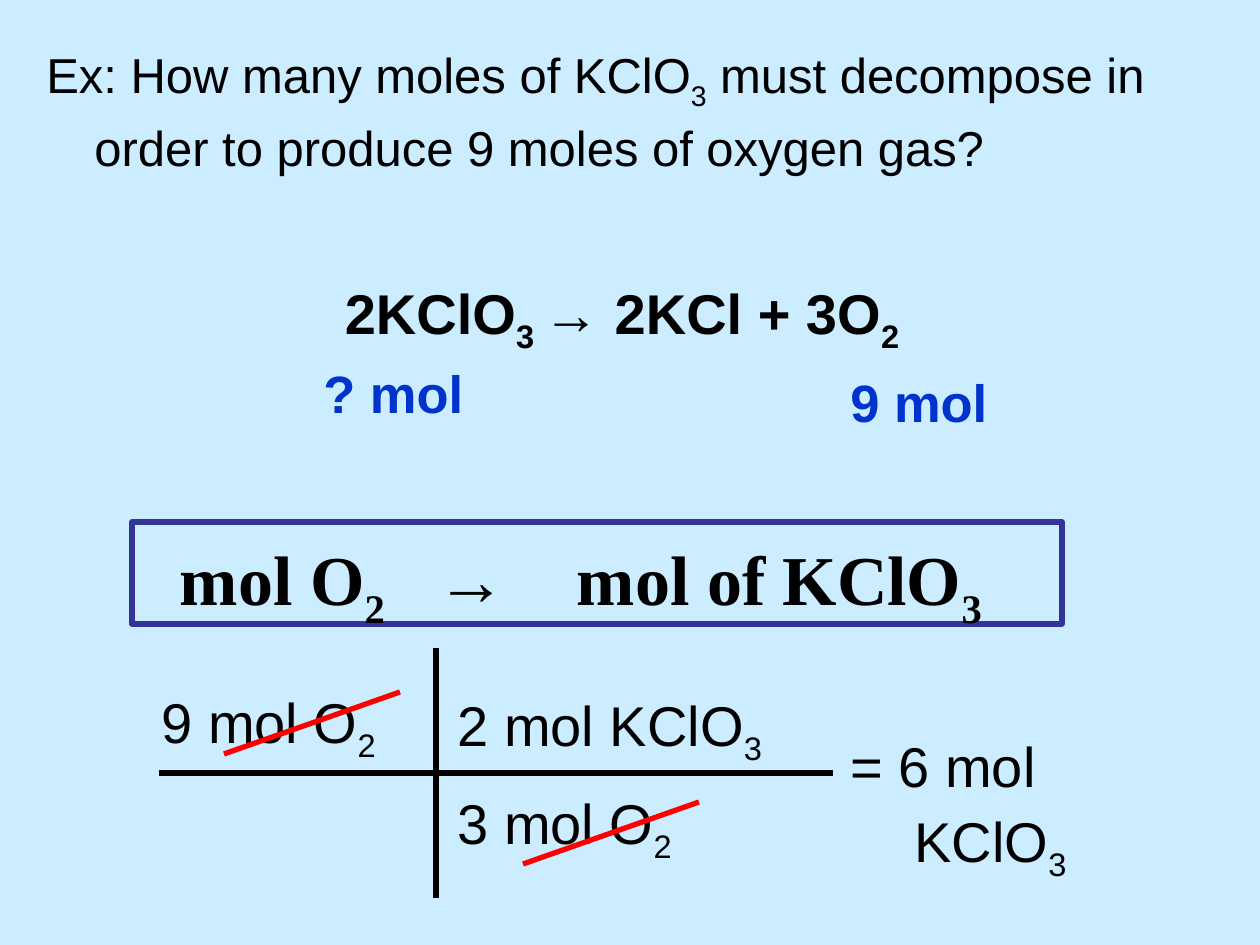
import pptx
import pptx.dml.color
import pptx.enum.shapes
import pptx.enum.text
import pptx.util
from lxml import etree
from pptx.oxml.ns import qn

EMU_PER_PX = 914400 / 126
HANG = 48
BLACK, BLUE, RED = "000000", "0033CC", "FF0000"


def px(length):
    """Turn pixels into EMU."""
    return pptx.util.Emu(round(length * EMU_PER_PX))


def color(hex_code):
    """Turn a hex string into an RGB colour."""
    return pptx.dml.color.RGBColor.from_string(hex_code)


def apply(target, values):
    """Set each attribute in values on target."""
    for name, value in values.items():
        setattr(target, name, value)


def style_line(line, hex_code):
    """Give a line the common width and a colour."""
    line.color.rgb = color(hex_code)
    line.width = pptx.util.Pt(3)


def indent(paragraph, left, first):
    """Set the left margin and first-line indent in pixels."""
    properties = paragraph._p.get_or_add_pPr()
    properties.set("marL", str(px(left)))
    properties.set("indent", str(px(first)))


def add_tab_stops(paragraph, stops):
    """Add left tab stops at pixel positions."""
    tab_list = etree.SubElement(paragraph._p.get_or_add_pPr(), qn("a:tabLst"))
    for stop in stops:
        etree.SubElement(tab_list, qn("a:tab"), pos=str(px(stop)), algn="l")


def add_formula(paragraph, formula, size, font="Arial", hex_code=BLACK, bold=False):
    """Write text in which every second part between bars is a subscript."""
    for position, part in enumerate(formula.split("|")):
        if not part:
            continue
        run = paragraph.add_run()
        run.text = part
        apply(run.font, {"name": font, "size": pptx.util.Pt(size), "bold": bold})
        run.font.color.rgb = color(hex_code)
        if position % 2:
            run.font._element.set("baseline", "-25000")


def add_text(slide, box, formulas, size, layout=None, gap=0, **look):
    """Add a text box with one hanging paragraph per formula."""
    frame = slide.shapes.add_textbox(*map(px, box)).text_frame
    frame.word_wrap = True
    for position, formula in enumerate(formulas):
        paragraph = frame.add_paragraph() if position else frame.paragraphs[0]
        indent(paragraph, HANG, -HANG)
        apply(paragraph, {"line_spacing": 1.1,
                          "space_before": pptx.util.Pt(gap if position else 0),
                          **(layout or {})})
        add_formula(paragraph, formula, size, **look)
    return frame


def add_stroke(slide, start, end, hex_code):
    """Draw a straight line without a shadow."""
    stroke = slide.shapes.add_connector(
        pptx.enum.shapes.MSO_CONNECTOR.STRAIGHT, *map(px, start + end))
    style_line(stroke.line, hex_code)
    etree.SubElement(stroke._element.spPr, qn("a:effectLst"))


def add_plan(slide, box, formula, stops):
    """Draw the framed conversion plan with its parts at tab stops."""
    plan = slide.shapes.add_shape(
        pptx.enum.shapes.MSO_SHAPE.RECTANGLE, *map(px, box))
    plan.shadow.inherit = False
    plan.fill.background()
    style_line(plan.line, "333399")
    apply(plan.text_frame, {
        "word_wrap": True, "margin_left": px(HANG), "margin_top": px(14),
        "margin_bottom": 0, "vertical_anchor": pptx.enum.text.MSO_ANCHOR.TOP})
    paragraph = plan.text_frame.paragraphs[0]
    paragraph.alignment = pptx.enum.text.PP_ALIGN.LEFT
    add_tab_stops(paragraph, stops)
    add_formula(paragraph, formula, 40, "Times New Roman", bold=True)


def main():
    """Build the mole conversion slide."""
    deck = pptx.Presentation()
    apply(deck, {"slide_width": px(1260), "slide_height": px(945)})
    slide = deck.slides.add_slide(deck.slide_layouts[6])
    slide.background.fill.solid()
    slide.background.fill.fore_color.rgb = color("CCECFF")

    question = ("Ex: How many moles of KClO|3| must decompose in "
                "order to produce 9 moles of oxygen gas?")
    add_text(slide, (34, 32, 1226, 236), [question], 28)
    add_text(slide, (112, 265, 1029, 113), ["2KClO|3 |→ 2KCl + 3O|2 "], 32,
             {"alignment": pptx.enum.text.PP_ALIGN.CENTER}, bold=True)
    add_text(slide, (311, 349, 231, 98), ["? mol"], 30, hex_code=BLUE, bold=True)
    add_text(slide, (838, 358, 192, 98), ["9 mol"], 30, hex_code=BLUE, bold=True)

    add_plan(slide, (132, 522, 930, 102), "mol O|2|\t→\tmol of KClO|3", (257, 397))

    add_text(slide, (149, 674, 287, 108), ["9 mol O|2"], 32)
    add_text(slide, (445, 677, 402, 208), ["2 mol KClO|3", "3 mol O|2"], 32, gap=8)
    result = add_text(slide, (838, 719, 422, 207), ["= 6 mol", "KClO|3"], 32)
    indent(result.paragraphs[1], HANG + 16, 0)

    add_stroke(slide, (159, 773), (833, 773), BLACK)
    add_stroke(slide, (436, 648), (436, 898), BLACK)
    for left, top in ((224, 692), (523, 802)):
        add_stroke(slide, (left + 176, top), (left, top + 62), RED)

    deck.save("out.pptx")


if __name__ == "__main__":
    main()
